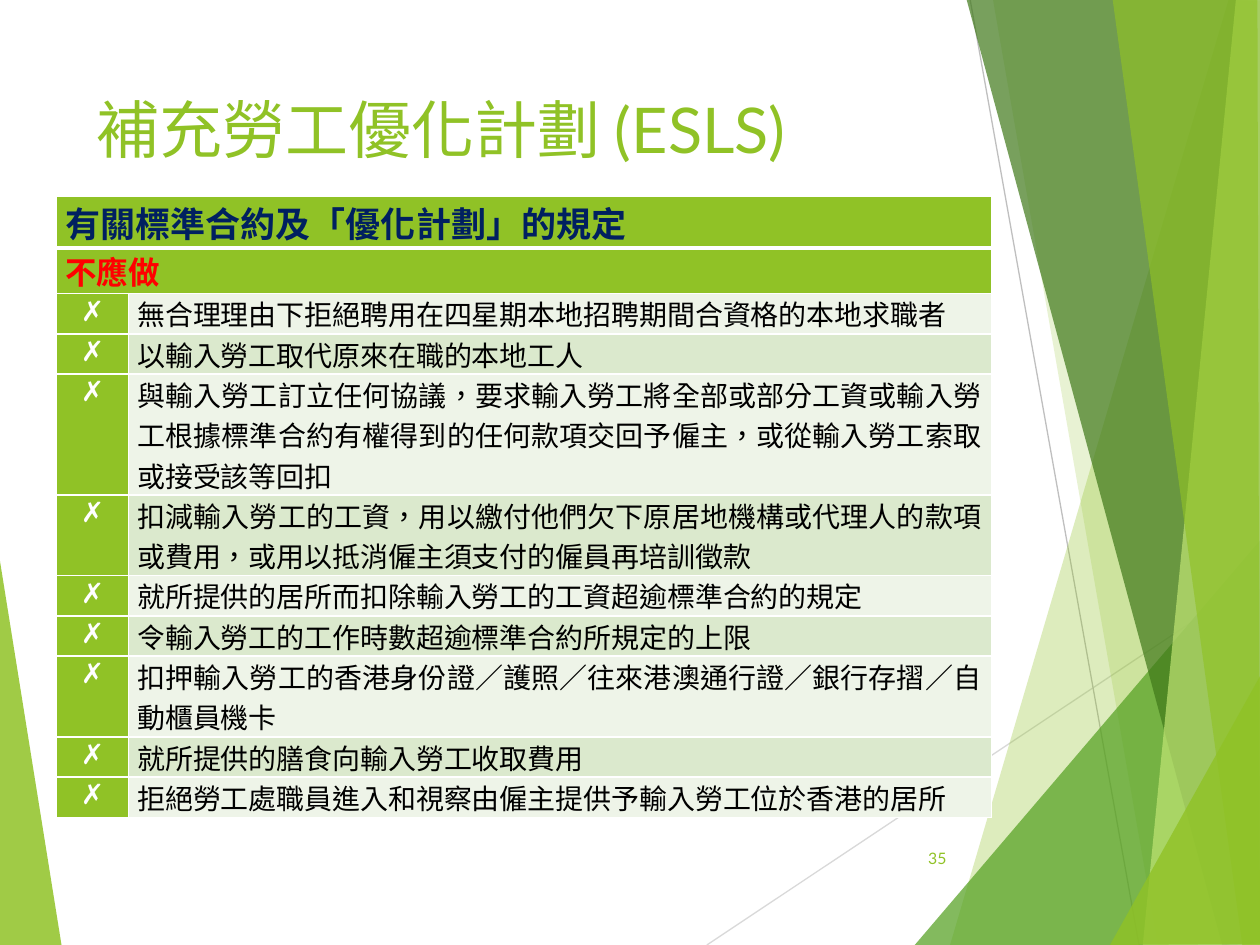
from lxml import etree
from pptx import Presentation
from pptx.dml.color import RGBColor
from pptx.enum import shapes, text
from pptx.oxml import ns
from pptx.util import Inches, Pt

THEME = dict(
    font="Lato", lang="zh-TW",
    green="90C226", leaf="54A021", dark="3F7819", lime="C0E474",
    navy="002060", red="FF0000", white="FFFFFF", black="000000",
    bands=("EEF4E8", "DBE9CD"),
    title=36, head=20, sub=18, body=16, page=9,
)
TITLE = "補充勞工優化計劃 (ESLS)"
PAGE = "35"
HEADS = [
    ("有關標準合約及「優化計劃」的規定", "head", "navy", 0.41),
    ("不應做", "sub", "red", 0.36),
]
MARK = "✗"
RULES = [
    ("無合理理由下拒絕聘用在四星期本地招聘期間合資格的本地求職者", 1),
    ("以輸入勞工取代原來在職的本地工人", 1),
    ("與輸入勞工訂立任何協議，要求輸入勞工將全部或部分工資或輸入勞工根據標準合約有權得到的任何款項交回予僱主，或從輸入勞工索取或接受該等回扣", 3),
    ("扣減輸入勞工的工資，用以繳付他們欠下原居地機構或代理人的款項或費用，或用以抵消僱主須支付的僱員再培訓徵款", 2),
    ("就所提供的居所而扣除輸入勞工的工資超逾標準合約的規定", 1),
    ("令輸入勞工的工作時數超逾標準合約所規定的上限", 1),
    ("扣押輸入勞工的香港身份證／護照／往來港澳通行證／銀行存摺／自動櫃員機卡", 2),
    ("就所提供的膳食向輸入勞工收取費用", 1),
    ("拒絕勞工處職員進入和視察由僱主提供予輸入勞工位於香港的居所", 1),
]
LEFT = [("green", 85, [(-0.01, 4.39), (0.49, 7.51), (-0.01, 7.5)])]
LINES = [
    ("D9D9D9", (5.61, 7.5), (10.01, 4.57)),
    ("BFBFBF", (7.7, 0), (9.04, 7.5)),
]
RIGHT = [
    ("green", 30, [(9.75, 0), (7.54, 7.5), (10.02, 7.51), (10.01, 0.01)]),
    ("green", 20, [(7.88, -0.01), (9.19, 7.5), (10.01, 7.5), (10.01, -0.01)]),
    ("leaf", 72, [(7.26, 7.5), (10, 4.29), (10.01, 7.5)]),
    ("dark", 70, [(7.67, -0.01), (9.7, 7.5), (10.01, 7.49), (10.01, -0.01)]),
    ("lime", 70, [(9.81, -0.01), (9.07, 7.5), (10.01, 7.5), (10, -0.01)]),
    ("green", 65, [(8.83, -0.01), (9.86, 7.5), (10, 7.5), (9.98, -0.01)]),
    ("green", 80, [(8.81, 7.5), (10.01, 5.35), (10.01, 7.49)]),
]
COLS = (0.57, 6.85)
LINE = 0.32


def paint(fill, color):
    fill.solid()
    fill.fore_color.rgb = RGBColor.from_string(color)


def write(frame, words, size="body", color="black", bold=False, align="LEFT"):
    para = frame.paragraphs[0]
    para.alignment = getattr(text.PP_ALIGN, align)
    run = para.add_run()
    run.text = words
    font = run.font
    font.name, font.size, font.bold = THEME["font"], Pt(THEME[size]), bold
    font.color.rgb = RGBColor.from_string(THEME[color])
    run._r.get_or_add_rPr().set("lang", THEME["lang"])


def label(slide, box, words, **style):
    frame = slide.shapes.add_textbox(*map(Inches, box)).text_frame
    frame.word_wrap = True
    frame.vertical_anchor = text.MSO_ANCHOR.MIDDLE
    write(frame, words, **style)


def facet(slide, color, alpha, points):
    spots = [(Inches(x), Inches(y)) for x, y in points]
    pen = slide.shapes.build_freeform(*spots[0])
    pen.add_line_segments(spots[1:], close=True)
    shape = pen.convert_to_shape()
    shape.shadow.inherit = False
    shape.line.fill.background()
    paint(shape.fill, THEME[color])
    tint = shape.fill._xPr.find(".//" + ns.qn("a:srgbClr"))
    etree.SubElement(tint, ns.qn("a:alpha"), val=str(alpha * 1000))


def rule(slide, color, start, end):
    line = slide.shapes.add_connector(
        shapes.MSO_CONNECTOR.STRAIGHT, *map(Inches, start + end))
    line.line.width = Pt(0.75)
    paint(line.line.fill, color)
    etree.SubElement(line._element.spPr, ns.qn("a:effectLst"))


def dress(cell, color, base=1):
    cell.margin_left = cell.margin_right = Inches(0.07)
    cell.margin_top = cell.margin_bottom = 0
    props = cell._tc.get_or_add_tcPr()
    for side, width in zip("LRTB", (1, 1, 1, base)):
        edge = etree.SubElement(props, ns.qn("a:ln" + side), w=str(Pt(width)))
        solid = etree.SubElement(edge, ns.qn("a:solidFill"))
        etree.SubElement(solid, ns.qn("a:srgbClr"), val=THEME["white"])
    paint(cell.fill, color)


def grid(slide):
    tall = [head[3] for head in HEADS] + [LINE * n for _, n in RULES]
    table = slide.shapes.add_table(
        len(tall), len(COLS),
        *map(Inches, (0.45, 1.56, sum(COLS), sum(tall)))).table
    table.first_row = table.horz_banding = False
    for col, width in zip(table.columns, COLS):
        col.width = Inches(width)
    for row, height in zip(table.rows, tall):
        row.height = Inches(height)
    for i, (words, size, color, _) in enumerate(HEADS):
        first, last = table.cell(i, 0), table.cell(i, 1)
        for cell in (first, last):
            dress(cell, THEME["green"], base=1 if i else 3)
        first.merge(last)
        if i:
            first.vertical_anchor = text.MSO_ANCHOR.MIDDLE
        write(first.text_frame, words, size=size, color=color,
              bold=True, align="JUSTIFY")
    for i, (words, _) in enumerate(RULES):
        mark, body = table.rows[i + len(HEADS)].cells
        dress(mark, THEME["green"])
        dress(body, THEME["bands"][i % 2])
        write(mark.text_frame, MARK, color="white", bold=True, align="CENTER")
        write(body.text_frame, words, align="JUSTIFY")


def main():
    deck = Presentation()
    deck.slide_width, deck.slide_height = Inches(10), Inches(7.5)
    slide = deck.slides.add_slide(deck.slide_layouts[6])
    for item in LEFT:
        facet(slide, *item)
    for item in LINES:
        rule(slide, *item)
    for item in RIGHT:
        facet(slide, *item)
    label(slide, (0.67, 0.66, 8.4, 0.72), TITLE, size="title", color="green")
    grid(slide)
    label(slide, (7.05, 6.61, 0.56, 0.4), PAGE,
          size="page", color="green", align="RIGHT")
    deck.save("out.pptx")


if __name__ == "__main__":
    main()
